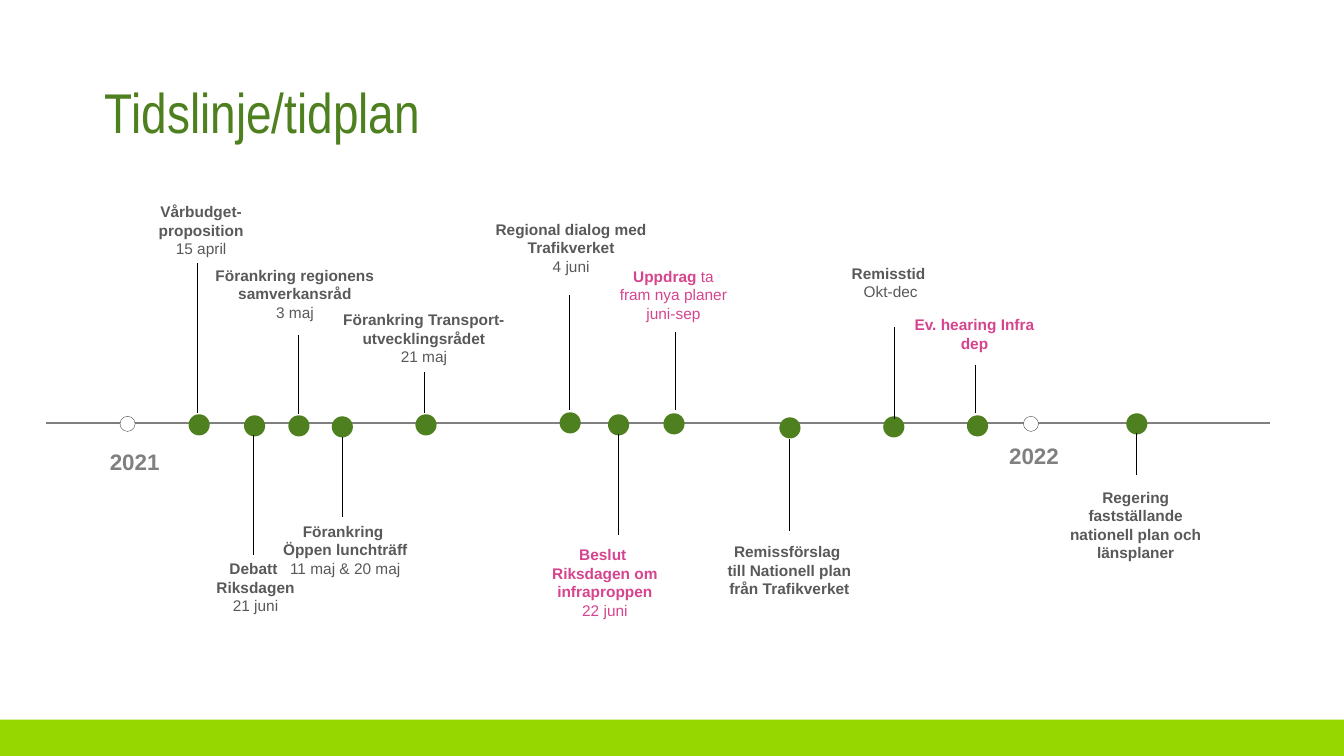
from dataclasses import dataclass

from lxml import etree
from pptx import Presentation
from pptx import util as u
from pptx.dml.color import RGBColor
from pptx.enum import shapes, text
from pptx.oxml.ns import qn


@dataclass(frozen=True)
class Theme:
    green: str = "4E801F"
    lime: str = "97D700"
    pink: str = "D6448E"
    body: str = "595959"
    gray: str = "808080"
    ring: str = "404040"
    black: str = "000000"
    white: str = "FFFFFF"
    font: str = "Arial"
    title_font: str = "Arial Narrow"
    title_size: int = 40
    year_size: int = 16
    label_size: int = 11


class Deck:
    def __init__(self, prs, theme):
        self.theme = theme
        self.s = prs.slides.add_slide(prs.slide_layouts[6])

    def shape(self, kind, x, y, w, h, fill, line=None):
        sp = self.s.shapes.add_shape(
            kind, u.Inches(x), u.Inches(y), u.Inches(w), u.Inches(h))
        sp.shadow.inherit = False
        sp.fill.solid()
        sp.fill.fore_color.rgb = RGBColor.from_string(fill)
        if line:
            sp.line.color.rgb = RGBColor.from_string(line)
            sp.line.width = u.Pt(0.25)
        else:
            sp.line.fill.background()

    def line(self, x1, y1, x2, y2, color, width):
        cx = self.s.shapes.add_connector(
            shapes.MSO_CONNECTOR.STRAIGHT,
            u.Inches(x1), u.Inches(y1), u.Inches(x2), u.Inches(y2))
        cx.line.color.rgb = RGBColor.from_string(color)
        cx.line.width = u.Pt(width)
        etree.SubElement(cx._element.spPr, qn("a:effectLst"))

    def text(self, box, paragraphs, size, color, font=None,
             align=text.PP_ALIGN.CENTER, anchor=text.MSO_ANCHOR.TOP, spacing=None):
        """Each paragraph is a list of (words, bold) runs."""
        tf = self.s.shapes.add_textbox(*map(u.Inches, box)).text_frame
        tf.word_wrap = True
        tf.vertical_anchor = anchor
        for i, runs in enumerate(paragraphs):
            p = tf.add_paragraph() if i else tf.paragraphs[0]
            p.text = runs[0][0]
            for words, _ in runs[1:]:
                p.add_run().text = words
            p.alignment = align
            p.line_spacing = spacing
            bolds = [bold for _, bold in runs]
            for j, r in enumerate(p.runs):
                r.font.bold = bolds[min(j, len(bolds) - 1)]
                r.font.size = u.Pt(size)
                r.font.name = font or self.theme.font
                r.font.color.rgb = RGBColor.from_string(color)

    def year(self, label, x, y, dot_x):
        t = self.theme
        self.text((x, y, 1.29, 0.37), [[(label, True)]], t.year_size, t.gray)
        self.shape(shapes.MSO_SHAPE.OVAL, dot_x, 4.13, 0.15, 0.15, t.white, t.ring)

    def event(self, dot, stem, box, paragraphs, color):
        t = self.theme
        self.shape(shapes.MSO_SHAPE.OVAL, *dot, 0.21, 0.21, t.green)
        x, top, bottom = stem
        self.line(x, top, x, bottom, t.black, 0.25)
        self.text(box, paragraphs, t.label_size, color)


def heading(words):
    return [(words, True)]


def date(words):
    return [(words, False)]


THEME = Theme()

# Dot (left, top), stem (x, top, bottom), label box, label text, colour
EVENTS = [
    ((1.87, 4.11), (1.96, 2.61, 4.1), (1.09, 1.96, 1.81, 0.66),
     [heading("Vårbudget-proposition"), date("15 april")], THEME.body),
    ((2.42, 4.12), (2.51, 4.32, 5.51), (1.63, 5.5, 1.81, 0.66),
     [heading("Debatt "), heading("Riksdagen"), date("21 juni")], THEME.body),
    ((2.86, 4.12), (2.96, 3.32, 4.11), (2.02, 2.59, 1.81, 0.66),
     [heading("Förankring regionens samverkansråd"), date("3 maj")], THEME.body),
    ((3.29, 4.13), (3.39, 4.34, 5.13), (2.52, 5.13, 1.81, 0.66),
     [heading("Förankring "), heading("Öppen lunchträff"),
      date("11 maj & 20 maj")], THEME.body),
    ((4.12, 4.11), (4.21, 3.69, 4.1), (3.3, 3.03, 1.81, 0.66),
     [heading("Förankring Transport-utvecklingsrådet"), date("21 maj")], THEME.body),
    ((5.55, 4.09), (5.65, 2.93, 4.07), (4.76, 2.13, 1.81, 0.66),
     [heading("Regional dialog med Trafikverket"), date("4 juni")], THEME.body),
    ((6.03, 4.11), (6.13, 4.31, 5.31), (5.36, 5.36, 1.28, 0.84),
     [heading("Beslut "), heading("Riksdagen om infraproppen"),
      date("22 juni")], THEME.pink),
    ((6.58, 4.1), (6.7, 3.29, 4.07), (6.01, 2.6, 1.34, 0.66),
     [heading("Uppdrag ") + date("ta fram nya planer"), date("juni-sep")], THEME.pink),
    ((7.73, 4.14), (7.83, 4.36, 5.27), (7.03, 5.33, 1.6, 0.84),
     [heading("Remissförslag \vtill Nationell plan från Trafikverket")], THEME.body),
    ((8.76, 4.13), (8.87, 3.24, 4.16), (7.73, 2.57, 2.21, 0.47),
     [heading("Remisstid "), date("Okt-dec")], THEME.body),
    ((9.59, 4.12), (9.67, 3.62, 4.1), (8.87, 3.08, 1.59, 0.47),
     [heading("Ev. hearing Infra dep")], THEME.pink),
    ((11.17, 4.1), (11.27, 4.3, 4.71), (10.43, 4.79, 1.67, 0.84),
     [heading("Regering fastställande nationell plan och länsplaner")], THEME.body),
]


def main():
    prs = Presentation()
    prs.slide_width, prs.slide_height = u.Inches(13.33), u.Inches(7.5)
    deck = Deck(prs, THEME)

    # Footer band and title
    deck.shape(shapes.MSO_SHAPE.RECTANGLE, 0, 7.14, 13.33, 0.36, THEME.lime)
    deck.text((0.94, 0.79, 11.44, 0.71), [[("Tidslinje/tidplan", False)]],
              THEME.title_size, THEME.green, THEME.title_font,
              text.PP_ALIGN.LEFT, text.MSO_ANCHOR.MIDDLE, 0.9)

    # Time axis with year marks
    deck.line(0.46, 4.2, 12.6, 4.2, THEME.gray, 1.25)
    deck.year("2021", 0.69, 4.4, 1.19)
    deck.year("2022", 9.61, 4.34, 10.15)

    # Events
    for event in EVENTS:
        deck.event(*event)

    prs.save("out.pptx")


if __name__ == "__main__":
    main()
